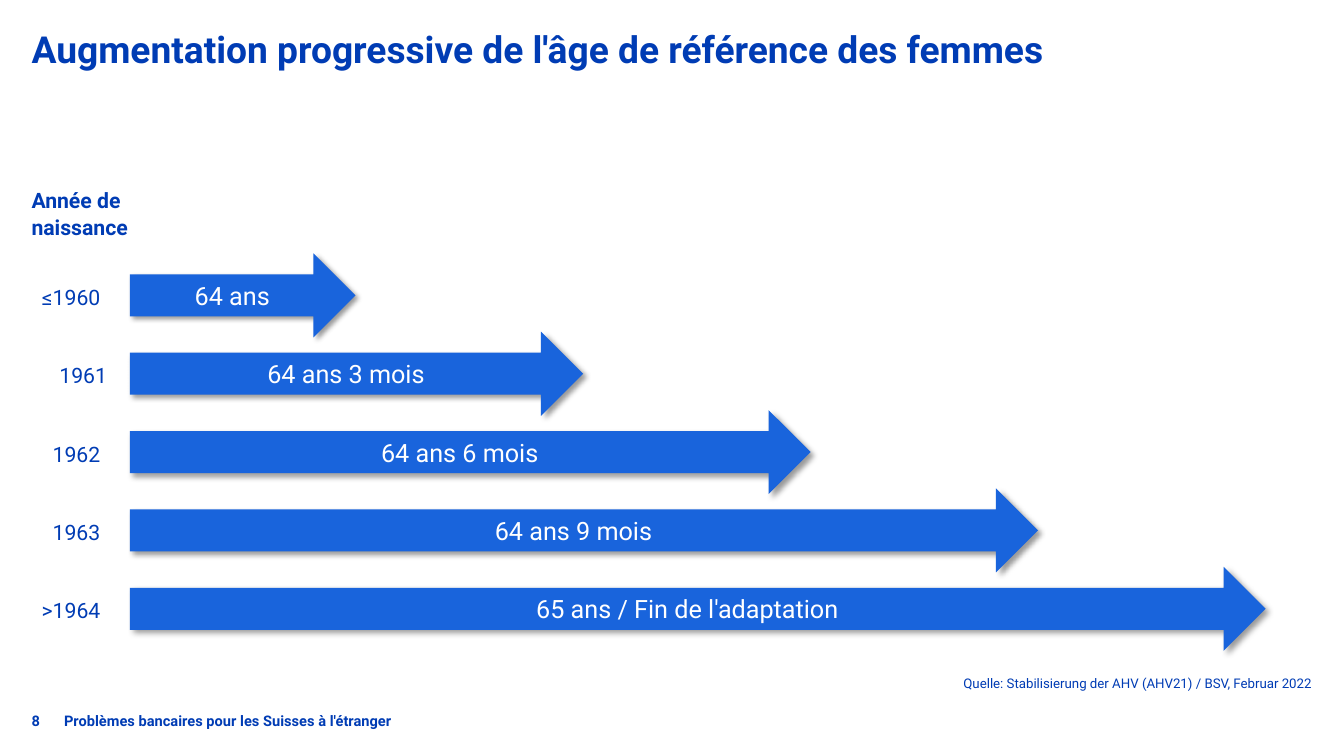
from lxml import etree
from pptx import Presentation
from pptx.dml.color import RGBColor
from pptx.enum.shapes import MSO_SHAPE
from pptx.enum.text import MSO_ANCHOR, MSO_AUTO_SIZE, PP_ALIGN
from pptx.oxml import parse_xml
from pptx.oxml.ns import nsdecls
from pptx.util import Inches, Pt

# Content
TITLE = "Augmentation progressive de l'âge de référence des femmes"
HEADING = "Année de naissance"
# (birth year, label width, reference age)
STEPS = [
    ("≤1960", 0.72, "64 ans"),
    ("1961", 0.79, "64 ans 3 mois"),
    ("1962", 0.72, "64 ans 6 mois"),
    ("1963", 0.72, "64 ans 9 mois"),
    (">1964", 0.72, "65 ans / Fin de l'adaptation"),
]
SOURCE = "Quelle: Stabilisierung der AHV (AHV21) / BSV, Februar 2022"
PAGE_NUMBER = "8"
FOOTER = "Problèmes bancaires pour les Suisses à l'étranger"

# Style and grid, in inches
FONT, NAVY, BLUE, WHITE = "Roboto", "003CB4", "1964DC", "FFFFFF"
MARGIN = 0.33
ARROW_LEFT, ARROW_TOP, ARROW_HEIGHT = 1.36, 2.65, 0.88
ROW_PITCH, FIRST_LENGTH, LENGTH_STEP = 0.82, 2.36, 2.38
LABEL_OFFSET = 0.31

SHADOW = f"""<a:effectLst {nsdecls('a')}>
  <a:outerShdw blurRad="{Pt(4)}" dist="{Pt(3)}" dir="2700000" algn="tl" rotWithShape="0">
    <a:srgbClr val="000000"><a:alpha val="40000"/></a:srgbClr>
  </a:outerShdw>
</a:effectLst>"""


def color(value):
    return RGBColor.from_string(value)


def write(shape, text, size, fill=NAVY, bold=False, align=PP_ALIGN.LEFT,
          anchor=MSO_ANCHOR.TOP, spacing=1.0, wrap=True):
    frame = shape.text_frame
    frame.text = text
    frame.word_wrap = wrap
    frame.auto_size = MSO_AUTO_SIZE.NONE
    frame.vertical_anchor = anchor
    frame.margin_left = frame.margin_right = 0
    frame.margin_top = frame.margin_bottom = 0
    paragraph = frame.paragraphs[0]
    paragraph.alignment = align
    paragraph.line_spacing = spacing
    font = paragraph.font
    font.name, font.size, font.bold = FONT, Pt(size), bold
    font.color.rgb = color(fill)


def add_text(slide, box, text, size, **style):
    shape = slide.shapes.add_textbox(*map(Inches, box))
    write(shape, text, size, **style)


def add_arrow(slide, box, text):
    shape = slide.shapes.add_shape(MSO_SHAPE.RIGHT_ARROW, *map(Inches, box))
    shape.fill.solid()
    shape.fill.fore_color.rgb = color(BLUE)
    shape.line.fill.background()
    shape.shadow.inherit = False
    effects = shape.element.spPr.find("{*}effectLst")
    effects.getparent().replace(effects, parse_xml(SHADOW))
    write(shape, text, 19, fill=WHITE, align=PP_ALIGN.CENTER,
          anchor=MSO_ANCHOR.MIDDLE)


def main():
    presentation = Presentation()
    presentation.slide_width = Inches(14.06)
    presentation.slide_height = Inches(7.91)
    slide = presentation.slides.add_slide(presentation.slide_layouts[5])

    # Title
    title = slide.shapes.title
    title.left, title.top = Inches(MARGIN), Inches(0.31)
    title.width, title.height = Inches(11.13), Inches(0.94)
    write(title, TITLE, 28, bold=True, spacing=0.95)

    # Arrows, one per birth year, each longer than the one above
    add_text(slide, (MARGIN, 1.95, 1.81, 0.34), HEADING, 16, bold=True, spacing=1.05)
    for row, (year, label_width, age) in enumerate(STEPS):
        top = ARROW_TOP + row * ROW_PITCH
        length = FIRST_LENGTH + row * LENGTH_STEP
        add_arrow(slide, (ARROW_LEFT, top, length, ARROW_HEIGHT), age)
        add_text(slide, (MARGIN, top + LABEL_OFFSET, label_width, 0.39), year, 16,
                 align=PP_ALIGN.RIGHT, spacing=1.05)

    # Source and footer
    add_text(slide, (9.31, 7.06, 4.41, 0.2), SOURCE, 10,
             align=PP_ALIGN.RIGHT, spacing=1.05)
    for left, width, text in [(MARGIN, 0.33, PAGE_NUMBER), (0.67, 13.06, FOOTER)]:
        add_text(slide, (left, 7.44, width, 0.21), text, 11, bold=True,
                 anchor=MSO_ANCHOR.MIDDLE, wrap=False)

    presentation.save("out.pptx")


if __name__ == "__main__":
    main()
